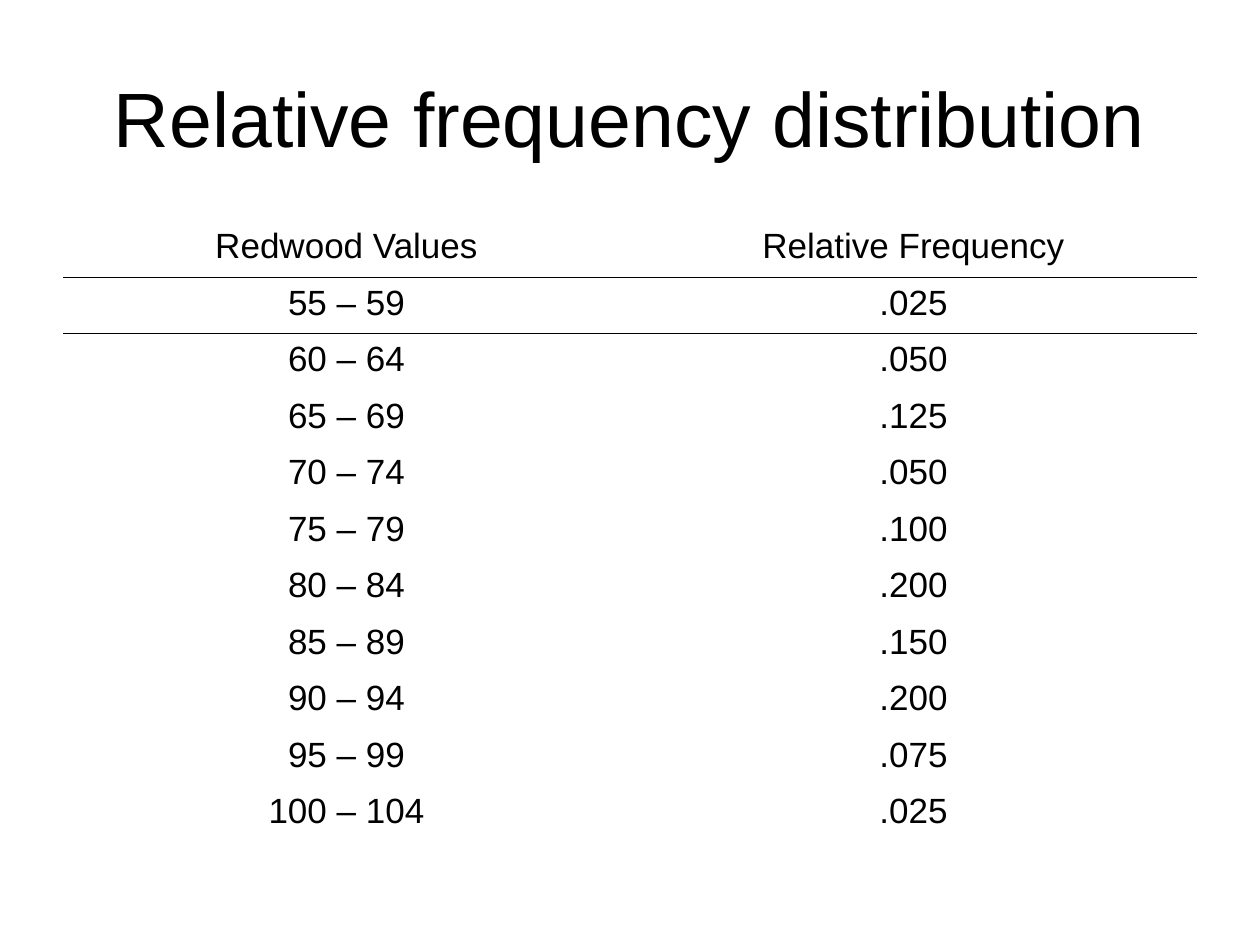
from dataclasses import dataclass

from lxml.etree import SubElement
from pptx import Presentation
from pptx.dml.color import RGBColor as RGB
from pptx.enum.text import MSO_ANCHOR as Anchor, PP_ALIGN as Align
from pptx.oxml.ns import qn
from pptx.util import Cm, Pt


@dataclass(frozen=True)
class Theme:
    font: str = "Arial"
    ink: str = "000000"
    paper: str = "FFFFFF"
    title_size: int = 44
    table_size: int = 20
    rule_width: int = 1
    table_style: str = "{2D5ABB26-0587-4C30-8999-92F81FD0307C}"


class SlideBuilder:
    def __init__(self, s, theme):
        self.s = s
        self.theme = theme
        fill = s.background.fill
        fill.solid()
        fill.fore_color.rgb = RGB.from_string(theme.paper)

    def text(self, tf, text, size):
        p = tf.paragraphs[0]
        p.alignment = Align.CENTER
        r = p.add_run()
        r.text = text
        r.font.name = self.theme.font
        r.font.size = Pt(size)
        r.font.color.rgb = RGB.from_string(self.theme.ink)

    def title(self, text, left, top, width, height):
        sp = self.s.shapes.add_textbox(Cm(left), Cm(top), Cm(width), Cm(height))
        tf = sp.text_frame
        tf.word_wrap = True
        tf.vertical_anchor = Anchor.MIDDLE
        self.text(tf, text, self.theme.title_size)

    def rule(self, cell, side):
        tc_pr = cell._tc.get_or_add_tcPr()
        ln = SubElement(tc_pr, qn(f"a:{side}"), w=str(Pt(self.theme.rule_width)))
        fill = SubElement(ln, qn("a:solidFill"))
        SubElement(fill, qn("a:srgbClr"), val=self.theme.ink)

    def table(self, rows, left, top, width, row_height):
        frame = self.s.shapes.add_table(
            len(rows), len(rows[0]), Cm(left), Cm(top),
            Cm(width), Cm(row_height * len(rows)))
        table = frame.table
        table.horz_banding = False
        table._tbl.tblPr.find(qn("a:tableStyleId")).text = self.theme.table_style
        header_sides = {0: "lnB", 1: "lnT"}
        for i, values in enumerate(rows):
            table.rows[i].height = Cm(row_height)
            for j, value in enumerate(values):
                cell = table.cell(i, j)
                if i in header_sides:
                    self.rule(cell, header_sides[i])
                cell.fill.background()
                self.text(cell.text_frame, value, self.theme.table_size)


def main():
    prs = Presentation()
    prs.slide_width, prs.slide_height = Cm(25.4), Cm(19.05)
    s = prs.slides.add_slide(prs.slide_layouts[6])
    builder = SlideBuilder(s, Theme())

    frequencies = [".025", ".050", ".125", ".050", ".100",
                   ".200", ".150", ".200", ".075", ".025"]
    rows = [("Redwood Values", "Relative Frequency")]
    for low, frequency in zip(range(55, 105, 5), frequencies):
        rows.append((f"{low} – {low + 4}", frequency))

    left, width = 1.27, 22.86
    builder.title("Relative frequency distribution", left, 0.76, width, 3.18)
    builder.table(rows, left, 4.45, width, 1.14)
    prs.save("out.pptx")


if __name__ == "__main__":
    main()
